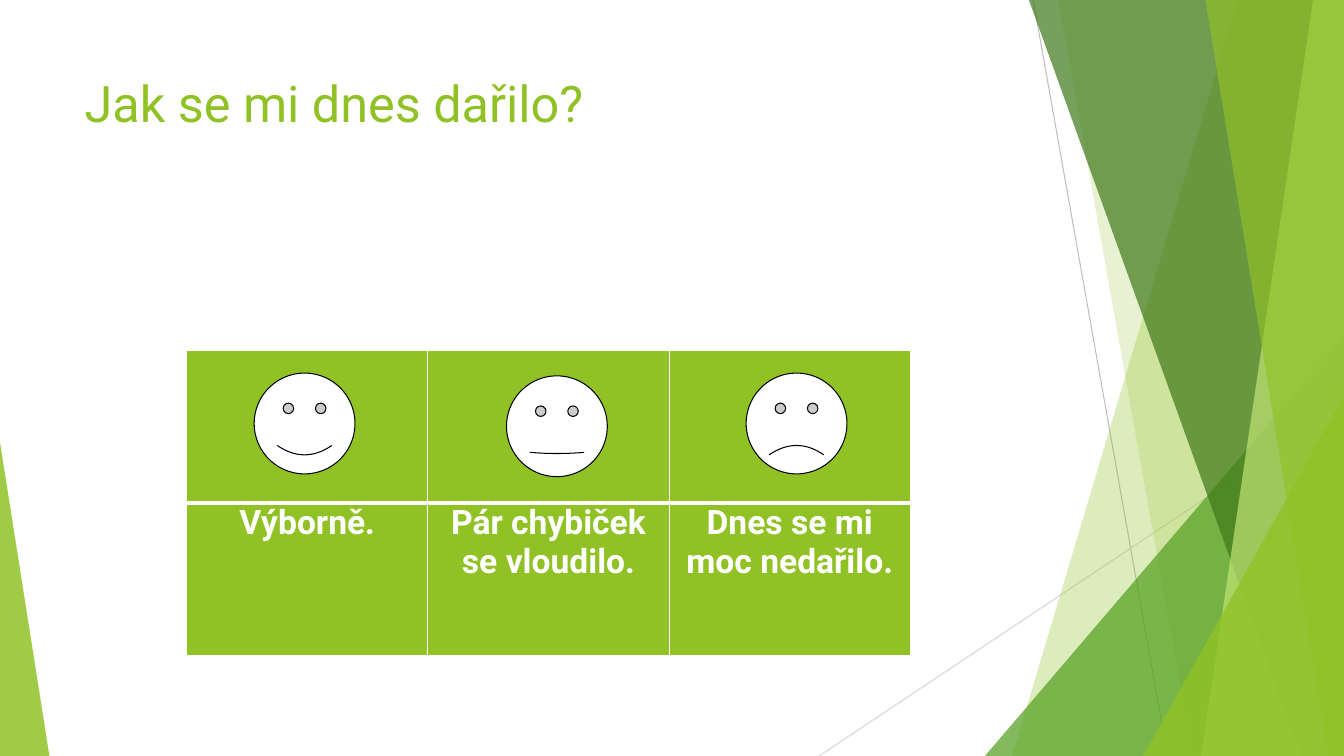
"""Build a self-assessment slide with three faces and a green facet border."""
from dataclasses import dataclass

from lxml import etree
from pptx import Presentation
from pptx.dml.color import RGBColor
from pptx.enum import shapes, text
from pptx.oxml import ns
from pptx.util import Pt


@dataclass(frozen=True)
class Theme:
    font: str = "Roboto"
    title: int = 36
    label: int = 24
    green: str = "90C226"
    leaf: str = "54A021"
    moss: str = "3F7819"
    lime: str = "C0E474"
    white: str = "FFFFFF"
    black: str = "000000"
    grey: str = "BFBFBF"
    pale: str = "D9D9D9"


THEME = Theme()
WIDE, HIGH = 960, 540
THIN, THICK, HAIR = 1, 3, 0.75
KIND = shapes.MSO_SHAPE


def put(item, values):
    for name, value in values.items():
        setattr(item, name, value)


def paint(fill, color, alpha=100):
    fill.solid()
    fill.fore_color.rgb = RGBColor.from_string(color)
    if alpha < 100:
        node = fill._xPr.find(".//" + ns.qn("a:srgbClr"))
        etree.SubElement(node, ns.qn("a:alpha"), val=str(alpha * 1000))


def write(frame, words, color, form):
    frame.text = words
    font = frame.paragraphs[0].runs[0].font
    put(font, {"name": THEME.font, **form})
    font.color.rgb = RGBColor.from_string(color)


def add_line(slide, start, end, color):
    line = slide.shapes.add_connector(
        shapes.MSO_CONNECTOR.STRAIGHT, *map(Pt, start + end))
    line.line.width = Pt(HAIR)
    line.line.color.rgb = RGBColor.from_string(color)
    etree.SubElement(line._element.spPr, ns.qn("a:effectLst"))


def add_band(slide, top, foot, color, alpha):
    pen = slide.shapes.build_freeform(Pt(top), 0)
    corners = ((WIDE, 0), (WIDE, HIGH), (foot, HIGH))
    pen.add_line_segments([(Pt(x), Pt(y)) for x, y in corners])
    band = pen.convert_to_shape()
    band.shadow.inherit = False
    paint(band.fill, color, alpha)
    band.line.fill.background()


def add_shape(slide, kind, box, bend):
    shape = slide.shapes.add_shape(kind, *map(Pt, box))
    shape.shadow.inherit = False
    shape.adjustments[0] = bend
    return shape


def add_wedge(slide, left, right, top, apex, color, alpha):
    box = (left, top, right - left, HIGH - top)
    wedge = add_shape(slide, KIND.ISOSCELES_TRIANGLE, box, apex)
    paint(wedge.fill, color, alpha)
    wedge.line.fill.background()


def add_face(slide, left, top, smile):
    face = add_shape(slide, KIND.SMILEY_FACE, (left, top, 72, 72), smile)
    paint(face.fill, THEME.white)
    paint(face.line.fill, THEME.black)
    face.line.width = Pt(HAIR)


def add_decor(slide):
    add_line(slide, (738, 0), (834, HIGH), THEME.grey)
    add_line(slide, (WIDE, 290), (585, HIGH), THEME.pale)
    for add, place, color, alpha in (
        (add_band, (884, 723), THEME.green, 30),
        (add_band, (756, 852), THEME.green, 20),
        (add_wedge, (703.5, WIDE, 240, 1), THEME.leaf, 72),
        (add_band, (735, 929.5), THEME.moss, 70),
        (add_band, (938, 858), THEME.lime, 70),
        (add_band, (861, 949), THEME.green, 65),
        (add_wedge, (816.5, WIDE, 283, 1), THEME.green, 80),
        (add_wedge, (0, 35.3, 316, 0), THEME.green, 85),
    ):
        add(slide, *place, color, alpha)


def add_border(cell, sides):
    props = cell._tc.get_or_add_tcPr()
    for spot, (side, width) in enumerate(sides.items()):
        line = etree.Element(ns.qn("a:ln" + side), w=str(Pt(width)))
        fill = etree.SubElement(line, ns.qn("a:solidFill"))
        etree.SubElement(fill, ns.qn("a:srgbClr"), val=THEME.white)
        props.insert(spot, line)


def add_grid(slide, labels, box):
    table = slide.shapes.add_table(2, len(labels), *map(Pt, box)).table
    put(table, {"first_row": False, "horz_banding": False})
    inset = {"margin_left": Pt(5), "margin_right": Pt(5),
             "margin_top": 0, "margin_bottom": 0}
    sides = {"L": THIN, "R": THIN, "T": THIN, "B": THIN}
    for upper, lower, words in zip(*(row.cells for row in table.rows), labels):
        for cell, inner in ((upper, "B"), (lower, "T")):
            put(cell, inset)
            paint(cell.fill, THEME.green)
            add_border(cell, {**sides, inner: THICK})
        write(lower.text_frame, words, THEME.white,
              {"size": Pt(THEME.label), "bold": True})
        lower.text_frame.paragraphs[0].alignment = text.PP_ALIGN.CENTER


def add_title(slide, words, box):
    title = slide.shapes.title
    put(title, dict(zip(("left", "top", "width", "height"), map(Pt, box))))
    frame = title.text_frame
    put(frame, {"word_wrap": True, "auto_size": text.MSO_AUTO_SIZE.NONE,
                "vertical_anchor": text.MSO_ANCHOR.TOP})
    write(frame, words, THEME.green, {"size": Pt(THEME.title)})
    frame.paragraphs[0].alignment = text.PP_ALIGN.LEFT


def main():
    deck = Presentation()
    put(deck, {"slide_width": Pt(WIDE), "slide_height": Pt(HIGH)})
    slide = deck.slides.add_slide(deck.slide_layouts[5])
    add_decor(slide)
    add_title(slide, "Jak se mi dnes dařilo?", (53.3, 48, 677, 104))
    labels = ("Výborně.", "Pár chybiček se vloudilo.",
              "Dnes se mi moc nedařilo.")
    add_grid(slide, labels, (133.3, 250.5, 517, 217.6))
    for left, top, smile in ((181.6, 266.5, 0.047), (533, 266.5, -0.047),
                             (361.8, 268.5, 0.006)):
        add_face(slide, left, top, smile)
    deck.save("out.pptx")


if __name__ == "__main__":
    main()
